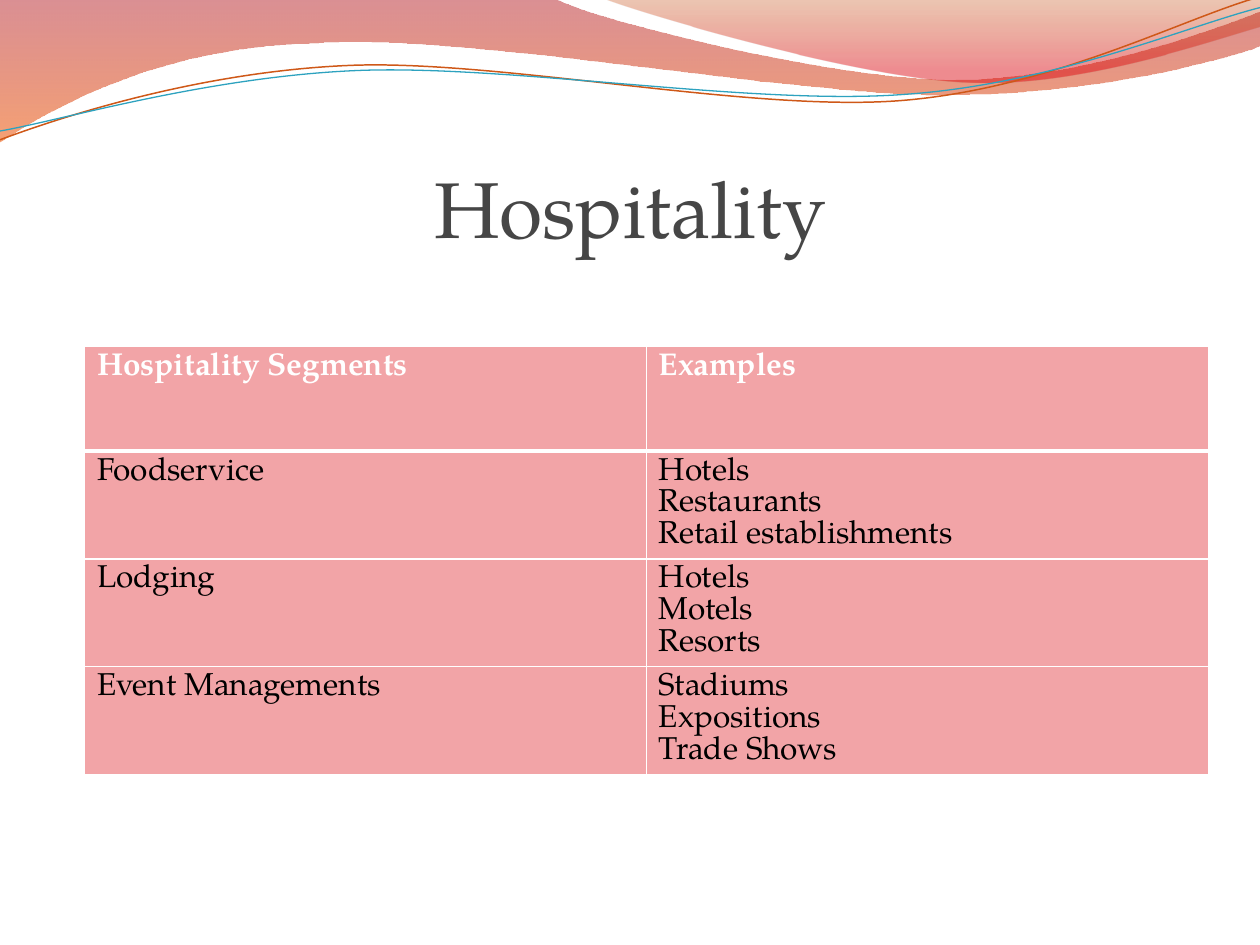
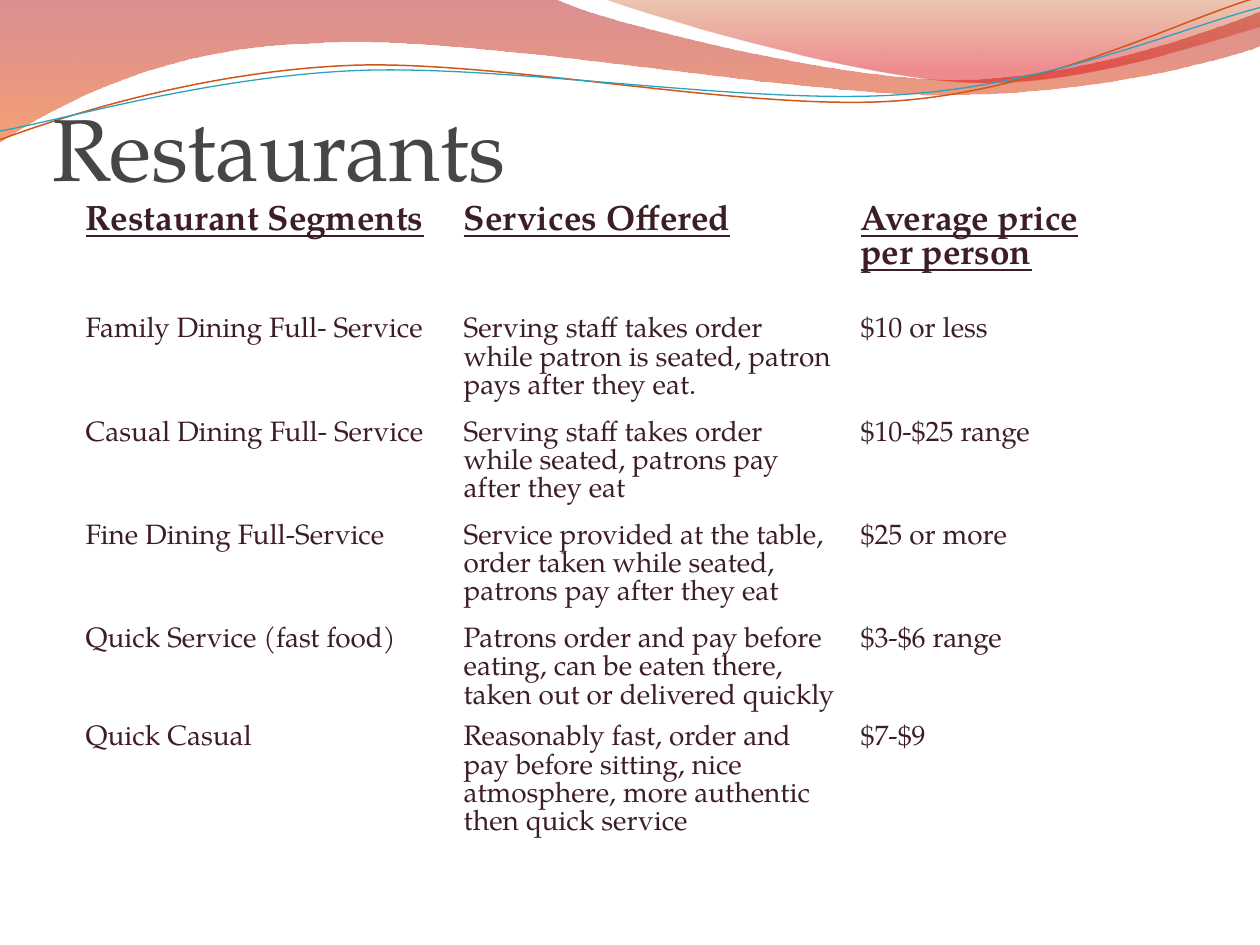
from math import cos, radians, sin

from lxml import etree
from pptx import Presentation
from pptx.dml.color import RGBColor
from pptx.enum.text import MSO_ANCHOR, MSO_AUTO_SIZE, PP_ALIGN
from pptx.oxml.ns import qn
from pptx.util import Inches, Pt

LEFT, CENTER = PP_ALIGN.LEFT, PP_ALIGN.CENTER
BOTTOM, FIXED = MSO_ANCHOR.BOTTOM, MSO_AUTO_SIZE.NONE
FONT = "TeX Gyre Pagella"
TITLE_ONLY = 5
TILT = 357.3

COLORS = {
    "title": "464646", "white": "FFFFFF", "black": "000000",
    "pink": "F2A4A7", "plum": "3E1E25",
    "crimson": "AF0911", "orange": "EE5300",
    "rust": "C24400", "red": "DC000B",
    "copper": "CF5818", "teal": "2DA2BF",
}

# Each path is a start point, then line ends (2 numbers) or Bezier curves (6).
# Each gradient stop is position, colour and opacity in percent.
BANDS = [
    ((-0.01, -0.01, 10.02, 1.14),
     [(0, 0), (4.4, -0.01), (4.76, 0.17, 6.64, 0.63, 7.58, 0.63),
      (8.53, 0.63, 9.58, 0.26, 10, 0.09), (10.01, 0.36),
      (9.83, 0.44, 8.7, 0.76, 7.46, 0.75), (6.22, 0.75, 3.82, 0.28, 2.57, 0.34),
      (1.29, 0.36, 0.46, 0.83, -0.01, 1.13), (0, 0)],
     [(0, "crimson", 45), (100, "orange", 55)]),
    ((4.79, -0.01, 5.21, 0.7),
     [(4.79, -0.01), (5.09, 0.11, 6.82, 0.62, 7.69, 0.65),
      (8.56, 0.69, 9.61, 0.32, 10, 0.21), (10, 0), (4.79, -0.01)],
     [(0, "rust", 30), (80, "red", 45)]),
]
CURVES = [
    ((-0.02, 0.22, 10.02, 0.71),
     [(0, 1.11), (0.48, 0.93, 1.58, 0.57, 2.77, 0.52),
      (3.95, 0.47, 5.93, 0.89, 7.13, 0.8), (8.33, 0.71, 9.38, 0.15, 9.98, -0.02)],
     "copper", 0.85),
    ((-0.02, 0.3, 10.03, 0.58),
     [(0, 1.04), (0.47, 0.96, 1.64, 0.61, 2.83, 0.56),
      (4.03, 0.51, 5.97, 0.84, 7.17, 0.75), (8.36, 0.67, 9.41, 0.21, 10, 0.06)],
     "teal", 0.75),
]

SEGMENTS = [
    ("Hospitality Segments", "Examples"),
    ("Foodservice", "Hotels\nRestaurants\nRetail establishments"),
    ("Lodging", "Hotels\nMotels\nResorts"),
    ("Event Managements", "Stadiums\nExpositions\nTrade Shows"),
]
DINING = [
    ("Restaurant Segments", "Services Offered", "Average price per person"),
    ("Family Dining Full- Service",
     "Serving staff takes order while patron is seated, patron pays after they eat.",
     "$10 or less"),
    ("Casual Dining Full- Service",
     "Serving staff takes order while seated, patrons pay after they eat",
     "$10-$25 range"),
    ("Fine Dining Full-Service",
     "Service provided at the table, order taken while seated, patrons pay after they eat",
     "$25 or more"),
    ("Quick Service (fast food)",
     "Patrons order and pay before eating, can be eaten there, taken out or delivered quickly",
     "$3-$6 range"),
    ("Quick Casual",
     "Reasonably fast, order and pay before sitting, nice atmosphere, "
     "more authentic then quick service",
     "$7-$9"),
]


def color(name):
    return RGBColor.from_string(COLORS[name])


def style(para, size, ink, bold=False, under=False):
    for run in para.runs:
        font = run.font
        font.name, font.size = FONT, Pt(size)
        font.bold, font.underline = bold, under
        font.color.rgb = color(ink)


def local(x, y, box, turn):
    """Give a slide point as EMU inside a box that is turned about its centre."""
    left, top, width, height = box
    dx, dy = x - left - width / 2, y - top - height / 2
    angle = radians(-turn)
    return (Inches(width / 2 + dx * cos(angle) - dy * sin(angle)),
            Inches(height / 2 + dx * sin(angle) + dy * cos(angle)))


def draw(slide, box, path, turn=0, close=False):
    """Add a freeform, then put true Bezier curves in its outline."""
    pen = slide.shapes.build_freeform(0, 0)
    pen.add_line_segments([(1, 1)], close=close)
    shape = pen.convert_to_shape()
    shape.left, shape.top, shape.width, shape.height = map(Inches, box)
    shape.rotation = turn
    shape.shadow.inherit = False
    outline = next(shape._element.iter(qn("a:path")))
    outline.set("w", str(shape.width))
    outline.set("h", str(shape.height))
    for old in list(outline):
        outline.remove(old)
    for spot, part in enumerate(path):
        kind = "cubicBezTo" if len(part) == 6 else "lnTo" if spot else "moveTo"
        step = etree.SubElement(outline, qn("a:" + kind))
        for point in zip(part[::2], part[1::2]):
            x, y = local(*point, box, turn)
            etree.SubElement(step, qn("a:pt"), x=str(x), y=str(y))
    if close:
        etree.SubElement(outline, qn("a:close"))
    return shape


def add_waves(slide):
    for box, path, stops in BANDS:
        band = draw(slide, box, path, close=True)
        band.line.fill.background()
        band.fill.gradient()
        band.fill.gradient_angle = 270
        for stop, (place, name, _) in zip(band.fill.gradient_stops, stops):
            stop.position = place / 100
            stop.color.rgb = color(name)
        marks = list(band._element.spPr.iter(qn("a:srgbClr")))
        for mark, (_, _, opacity) in zip(marks, stops):
            etree.SubElement(mark, qn("a:alpha"), val=str(opacity * 1000))
    for box, path, name, width in CURVES:
        curve = draw(slide, box, path, TILT)
        curve.fill.background()
        curve.line.color.rgb = color(name)
        curve.line.width = Pt(width)


def set_title(slide, text, box, size, align):
    title = slide.shapes.title
    slide.shapes._spTree.append(title._element)  # bring above the waves
    title.left, title.top, title.width, title.height = map(Inches, box)
    frame = title.text_frame
    frame.text = text
    frame.auto_size, frame.vertical_anchor = FIXED, BOTTOM
    frame.margin_left = frame.margin_right = frame.margin_bottom = 0
    frame.margin_top = Inches(0.05)
    para = frame.paragraphs[0]
    para.alignment = align
    style(para, size, "title")


def set_edges(cell, widths):
    """Draw white borders; widths are points for left, right, top, bottom."""
    props = cell._tc.get_or_add_tcPr()
    for spot, (side, width) in enumerate(zip("LRTB", widths)):
        line = etree.Element(qn("a:ln" + side), w=str(Pt(width)))
        fill = etree.SubElement(line, qn("a:solidFill"))
        etree.SubElement(fill, qn("a:srgbClr"), val=COLORS["white"])
        props.insert(spot, line)


def add_grid(slide, data, left, top, cols, rows, head, body, fill=None):
    """Add a table; head and body hold the text style of their rows."""
    frame = slide.shapes.add_table(len(rows), len(cols), Inches(left), Inches(top),
                                   Inches(sum(cols)), Inches(sum(rows)))
    table = frame.table
    table.first_row = table.horz_banding = False
    for col, width in zip(table.columns, cols):
        col.width = Inches(width)
    for r, (height, texts) in enumerate(zip(rows, data)):
        table.rows[r].height = Inches(height)
        for c, text in enumerate(texts):
            cell = table.cell(r, c)
            cell.text_frame.text = text
            for para in cell.text_frame.paragraphs:
                style(para, **(body if r else head))
            if fill:
                cell.fill.solid()
                cell.fill.fore_color.rgb = color(fill)
            else:
                cell.fill.background()
            set_edges(cell, (1, 1, 3 if r == 1 else 1, 1 if r else 3))


def add_page(deck):
    slide = deck.slides.add_slide(deck.slide_layouts[TITLE_ONLY])
    add_waves(slide)
    return slide


def add_hospitality(deck):
    slide = add_page(deck)
    set_title(slide, "Hospitality", (0.5, 0.77, 9, 1.25), 45, CENTER)
    add_grid(slide, SEGMENTS, 0.67, 2.75, [4.46] * 2, [0.83] * 4,
             {"size": 18, "ink": "white", "bold": True},
             {"size": 18, "ink": "black"}, "pink")


def add_restaurants(deck):
    slide = add_page(deck)
    set_title(slide, "Restaurants", (0.42, 0.33, 9, 1.25), 50, LEFT)
    add_grid(slide, DINING, 0.58, 1.58, [3, 3.15, 2.02],
             [0.89, 0.82, 0.82, 0.82, 0.78, 1.01],
             {"size": 20, "ink": "plum", "bold": True, "under": True},
             {"size": 16, "ink": "plum"})


def main():
    deck = Presentation()
    deck.slide_width, deck.slide_height = Inches(10), Inches(7.5)
    add_hospitality(deck)
    add_restaurants(deck)
    deck.save("out.pptx")


if __name__ == "__main__":
    main()
